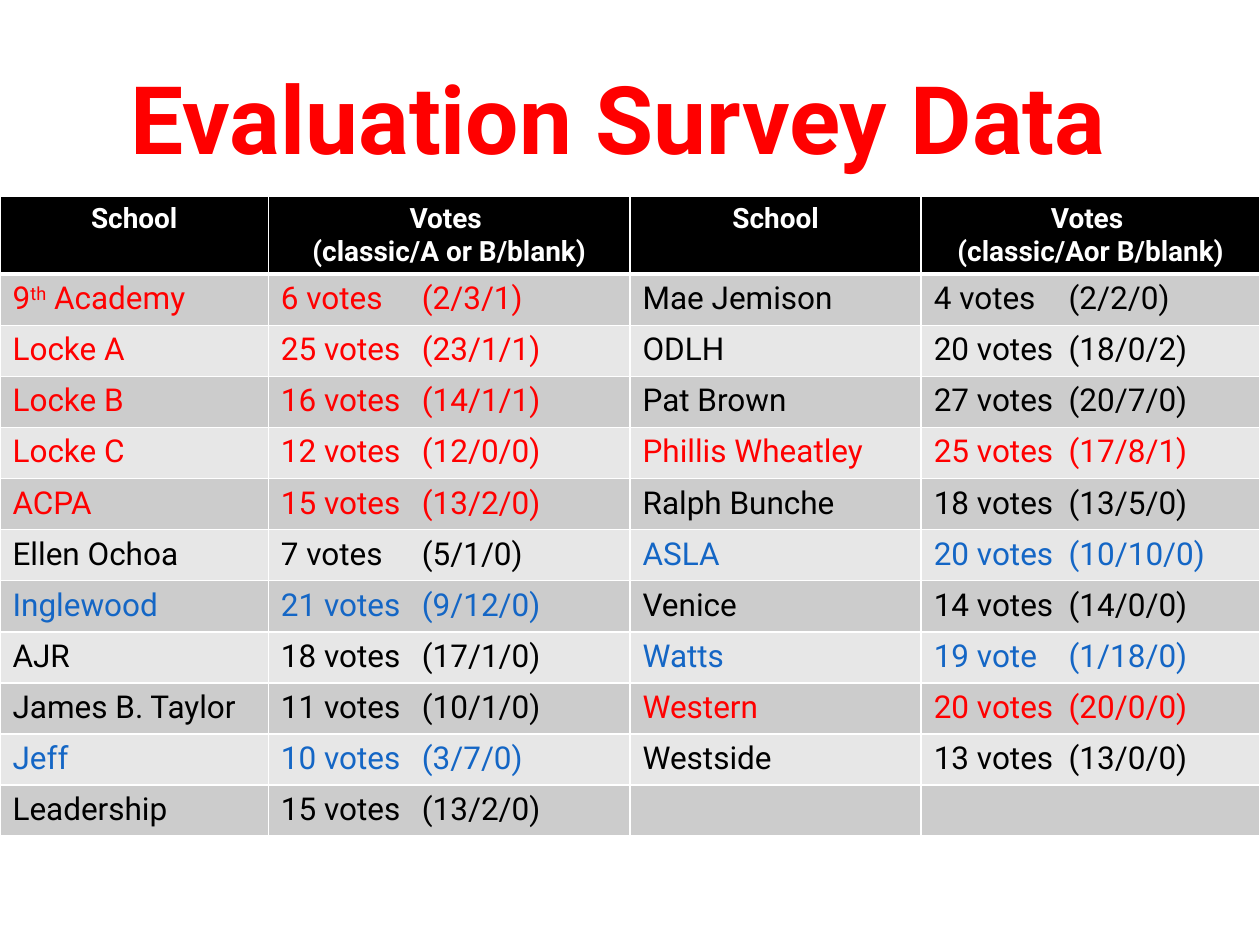
from lxml import etree
from pptx import Presentation
from pptx.dml.color import RGBColor
from pptx.enum import text as t
from pptx.oxml.ns import qn
from pptx.util import Cm, Pt

# Content: text between ^ marks is superscript
TITLE = "Evaluation Survey Data "
HEADERS = [["School"], ["Votes ", "(classic/A or B/blank)"],
           ["School"], ["Votes ", "(classic/Aor B/blank)"]]
RED, BLUE, BLACK, WHITE = "FF0000", "1466C5", "000000", "FFFFFF"
LEFT_SCHOOLS = [
    ("9^th^ Academy", "6 votes", "(2/3/1)", RED),
    ("Locke A", "25 votes", "(23/1/1)", RED),
    ("Locke B", "16 votes", "(14/1/1)", RED),
    ("Locke C", "12 votes", "(12/0/0)", RED),
    ("ACPA", "15 votes", "(13/2/0)", RED),
    ("Ellen Ochoa", "7 votes", "(5/1/0)", BLACK),
    ("Inglewood", "21 votes", "(9/12/0)", BLUE),
    ("AJR", "18 votes", "(17/1/0)", BLACK),
    ("James B. Taylor", "11 votes", "(10/1/0)", BLACK),
    ("Jeff", "10 votes", "(3/7/0)", BLUE),
    ("Leadership", "15 votes", "(13/2/0)", BLACK),
]
RIGHT_SCHOOLS = [
    ("Mae Jemison", "4 votes", "(2/2/0)", BLACK),
    ("ODLH", "20 votes", "(18/0/2)", BLACK),
    ("Pat Brown", "27 votes", "(20/7/0)", BLACK),
    ("Phillis Wheatley", "25 votes", "(17/8/1)", RED),
    ("Ralph Bunche", "18 votes", "(13/5/0)", BLACK),
    ("ASLA", "20 votes", "(10/10/0)", BLUE),
    ("Venice", "14 votes", "(14/0/0)", BLACK),
    ("Watts", "19 vote", "(1/18/0)", BLUE),
    ("Western", "20 votes", "(20/0/0)", RED),
    ("Westside", "13 votes", "(13/0/0)", BLACK),
]
# First column, tab stop of the votes column, schools
HALVES = [(0, Cm(2.84), LEFT_SCHOOLS), (2, Cm(2.72), RIGHT_SCHOOLS)]
COLUMN_WIDTHS = [5.41, 7.29, 5.87, 6.83]
HEADER_HEIGHT, ROW_HEIGHT = 1.55, 1.03
BANDS = ["CCCCCC", "E7E7E7"]


def color(value):
    return RGBColor.from_string(value)


def write(frame, lines, size=18, tone=BLACK, bold=False, align=None, tab=None):
    for index, line in enumerate(lines):
        paragraph = frame.paragraphs[0] if index == 0 else frame.add_paragraph()
        paragraph.alignment = align
        if tab:
            stops = etree.SubElement(paragraph._p.get_or_add_pPr(), qn("a:tabLst"))
            etree.SubElement(stops, qn("a:tab"), pos=str(tab), algn="l")
        for part, piece in enumerate(line.split("^")):
            run = paragraph.add_run()
            run.text = piece
            run.font.name, run.font.size, run.font.bold = "Roboto", Pt(size), bold
            run.font.color.rgb = color(tone)
            if part % 2:
                run._r.get_or_add_rPr().set("baseline", "30000")


def format_cell(cell, fill, top=1, bottom=1):
    properties = cell._tc.get_or_add_tcPr()
    for side, width in [("L", 1), ("R", 1), ("T", top), ("B", bottom)]:
        line = etree.SubElement(properties, qn(f"a:ln{side}"), w=str(Pt(width)))
        solid = etree.SubElement(line, qn("a:solidFill"))
        etree.SubElement(solid, qn("a:srgbClr"), val=WHITE)
    cell.fill.solid()
    cell.fill.fore_color.rgb = color(fill)


presentation = Presentation()
presentation.slide_width, presentation.slide_height = Cm(25.4), Cm(19.05)
slide = presentation.slides.add_slide(presentation.slide_layouts[5])

# Title
title = slide.shapes.title
title.left, title.top, title.width, title.height = Cm(1.27), Cm(0.76), Cm(22.86), Cm(3.18)
title.text_frame.vertical_anchor = t.MSO_ANCHOR.MIDDLE
write(title.text_frame, [TITLE], size=54, tone=RED, bold=True, align=t.PP_ALIGN.CENTER)

# Table grid
row_count = len(LEFT_SCHOOLS)
table = slide.shapes.add_table(
    row_count + 1, len(HEADERS), Cm(0), Cm(3.96), Cm(sum(COLUMN_WIDTHS)),
    Cm(HEADER_HEIGHT + row_count * ROW_HEIGHT)).table
for column, width in zip(table.columns, COLUMN_WIDTHS):
    column.width = Cm(width)
for index, row in enumerate(table.rows):
    row.height = Cm(ROW_HEIGHT if index else HEADER_HEIGHT)
    for cell in row.cells:
        if index:
            format_cell(cell, BANDS[(index - 1) % 2], top=3 if index == 1 else 1)
        else:
            format_cell(cell, BLACK, bottom=3)

# Table text
for column, lines in enumerate(HEADERS):
    write(table.cell(0, column).text_frame, lines, size=16, tone=WHITE, bold=True,
          align=t.PP_ALIGN.CENTER)
for column, tab, schools in HALVES:
    for row, (school, votes, split, tone) in enumerate(schools, start=1):
        write(table.cell(row, column).text_frame, [school], tone=tone)
        write(table.cell(row, column + 1).text_frame, [f"{votes}\t{split}"], tone=tone, tab=tab)

presentation.save("out.pptx")
